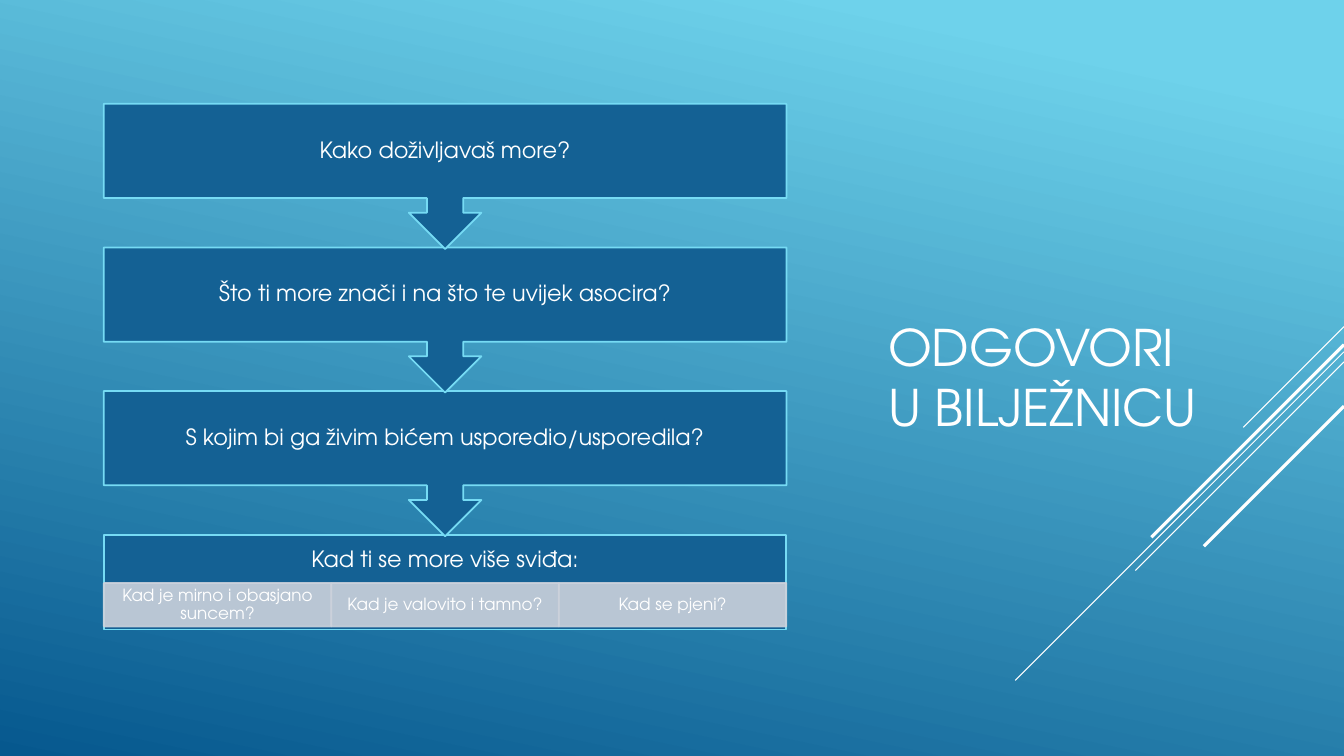
from lxml.etree import SubElement
from pptx import Presentation
from pptx.dml.color import RGBColor
from pptx.enum.shapes import MSO_CONNECTOR, MSO_SHAPE as Preset
from pptx.enum.text import MSO_ANCHOR, PP_ALIGN
from pptx.oxml.ns import qn
from pptx.util import Inches, Pt

TITLE = "ODGOVORI U BILJEŽNICU"
QUESTIONS = [
    "Kako doživljavaš more?",
    "Što ti more znači i na što te uvijek asocira?",
    "S kojim bi ga živim bićem usporedio/usporedila?",
]
LAST_QUESTION = "Kad ti se more više sviđa:"
CHOICES = ["Kad je mirno i obasjano suncem?", "Kad je valovito i tamno?", "Kad se pjeni?"]
RAYS = [(3.24, 1.0, 0.75), (3.49, 3.26, 0.75), (3.59, 2.07, 0.75), (3.42, 1.91, 2.25), (4.03, 1.39, 2.25)]

FONT = "TeX Gyre Adventor"
WHITE, SKY, SEA = "FFFFFF", "6ED2EB", "06588E"
BOX, BORDER, CHOICE = "146194", "76DBF4", "CCD2DC"
WIDTH, HEIGHT = 13.33, 7.5
LEFT, TOP, FLOW_WIDTH = 1.03, 1.03, 6.77
STEP, BODY, CALLOUT = 1.425, 0.94, 1.44
HEADING_HEIGHT, CHOICE_OFFSET, CHOICE_HEIGHT = 0.51, 0.48, 0.43


def color(value):
    return RGBColor.from_string(value)


def add_panel(preset, place, fill=None, border=None):
    panel = slide.shapes.add_shape(preset, *map(Inches, place))
    panel.shadow.inherit = False
    if fill:
        panel.fill.solid()
        panel.fill.fore_color.rgb = color(fill)
    if border:
        panel.line.color.rgb = color(border)
        panel.line.width = Pt(1.25)
    else:
        panel.line.fill.background()
    return panel


def write(holder, text, size, insets, align=PP_ALIGN.CENTER, spacing=0.9):
    frame = holder.text_frame
    frame.word_wrap = True
    frame.vertical_anchor = MSO_ANCHOR.MIDDLE
    frame.margin_left = frame.margin_right = Inches(insets[0])
    frame.margin_top = frame.margin_bottom = Inches(insets[1])
    frame.text = text
    paragraph = frame.paragraphs[0]
    paragraph.alignment = align
    paragraph.line_spacing = spacing
    font = paragraph.runs[0].font
    font.name, font.size, font.color.rgb = FONT, Pt(size), color(WHITE)


def add_text(place, *style):
    write(slide.shapes.add_textbox(*map(Inches, place)), *style)


deck = Presentation()
deck.slide_width, deck.slide_height = Inches(WIDTH), Inches(HEIGHT)
slide = deck.slides.add_slide(deck.slide_layouts[6])

water = add_panel(Preset.RECTANGLE, (0, 0, WIDTH, HEIGHT))
water.fill.gradient()
water.fill.gradient_angle = 360 - 102
for stop, position, tone in zip(water.fill.gradient_stops, (0.1, 1), (SKY, SEA)):
    stop.position = position
    stop.color.rgb = color(tone)

for start, reach, weight in RAYS:
    ends = (WIDTH, start, WIDTH - reach, start + reach)
    ray = slide.shapes.add_connector(MSO_CONNECTOR.STRAIGHT, *map(Inches, ends))
    ray.line.color.rgb = color(WHITE)
    ray.line.width = Pt(weight)
    SubElement(ray._element.spPr, qn("a:effectLst"))

add_text((8.71, 1.96, 3.33, 3.55), TITLE, 36, (0.1, 0.05), PP_ALIGN.LEFT, 1.0)

last_top = TOP + len(QUESTIONS) * STEP
add_panel(Preset.RECTANGLE, (LEFT, last_top, FLOW_WIDTH, BODY), BOX, BORDER)
add_text((LEFT, last_top, FLOW_WIDTH, HEADING_HEIGHT), LAST_QUESTION, 16, (0.12, 0.12))

choice_width = FLOW_WIDTH / len(CHOICES)
for column, choice in enumerate(CHOICES):
    place = (LEFT + column * choice_width, last_top + CHOICE_OFFSET, choice_width, CHOICE_HEIGHT)
    cell = add_panel(Preset.RECTANGLE, place, CHOICE, CHOICE)
    for tint in cell._element.spPr.iter(qn("a:srgbClr")):
        SubElement(tint, qn("a:alpha"), val="90000")
    write(cell, choice, 12, (0.09, 0.02))

for row, question in reversed(list(enumerate(QUESTIONS))):
    place = (LEFT, TOP + row * STEP, FLOW_WIDTH, CALLOUT)
    callout = add_panel(Preset.DOWN_ARROW_CALLOUT, place, BOX, BORDER)
    write(callout, question, 16, (0.12, 0.12))

deck.save("out.pptx")
